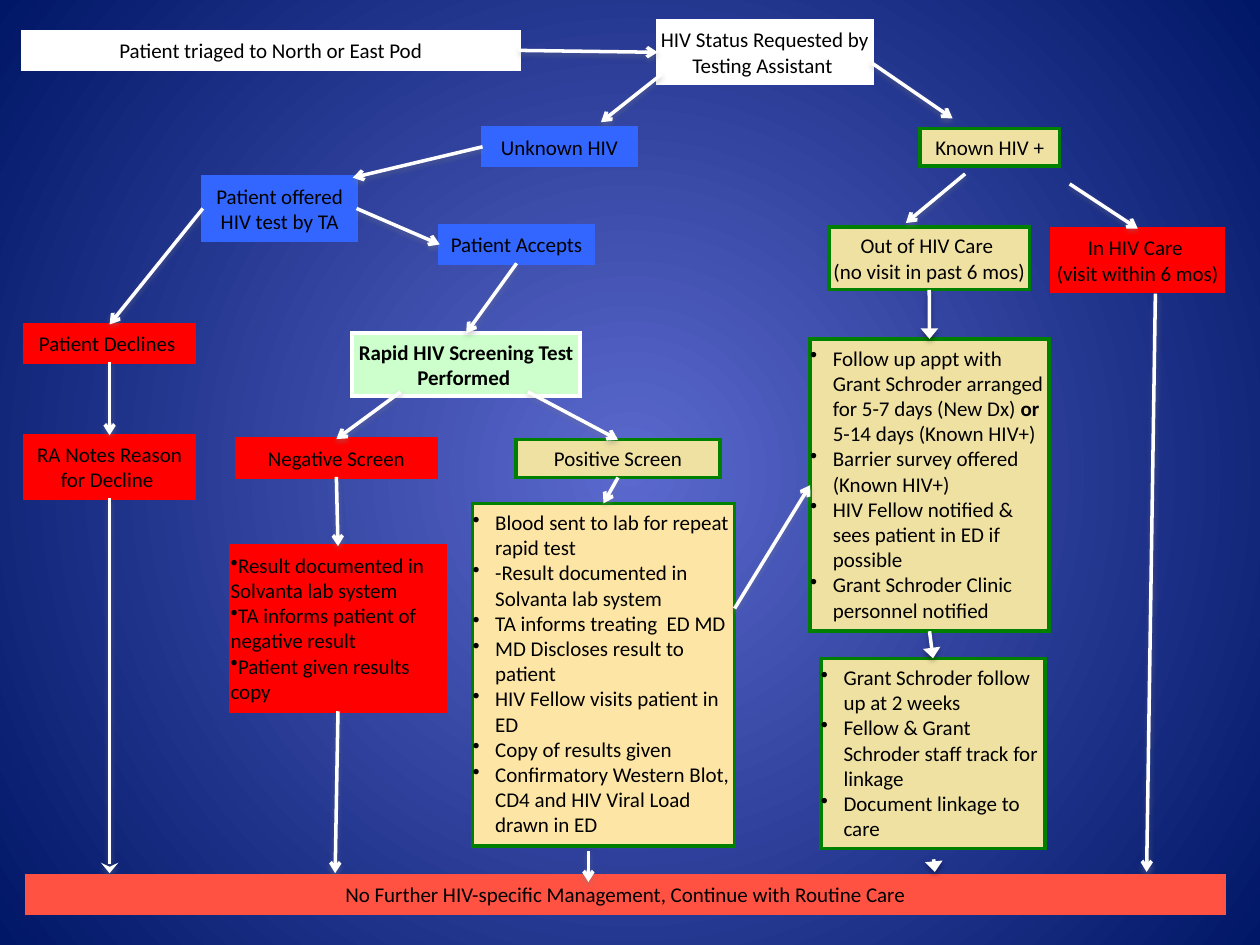
from dataclasses import dataclass
from typing import Union

from pptx import Presentation
from pptx.dml.color import RGBColor as RGB
from pptx.enum.shapes import MSO_CONNECTOR as Link, MSO_SHAPE as Kind
from pptx.enum.text import MSO_ANCHOR as Anchor, MSO_AUTO_SIZE as Auto, PP_ALIGN as Align
from pptx.oxml import parse_xml
from pptx.oxml.ns import nsdecls
from pptx.util import Inches, Pt

COLORS = {
    "white": "FFFFFF", "black": "000000", "gray": "808080", "blue": "3366FF",
    "red": "FF0000", "coral": "FF5243", "mint": "CCFFCC", "sand": "EFE1A2",
    "cream": "FDE6A5", "green": "008000", "glow": "5B69CE", "navy": "001666",
}
COLS, ROWS = 100, 75
WIDTH, HEIGHT = Inches(10), Inches(7.5)
TOP, LEFT, BOTTOM, RIGHT = range(4)
FLAT, HANG = 0, 0.18


@dataclass
class Box:
    name: str
    col: float
    row: float
    wide: float
    high: float
    fill: str
    edge: str
    lines: list[str]
    hang: Union[float, None] = None


@dataclass
class Arrow:
    start: tuple
    end: tuple
    tip: str = "arrow"
    shade: str = "gray"
    size: str = "med"


BOXES = [
    Box("triage", 1.8, 2.5, 39.4, 3, "white", "white", ["Patient triaged to North or East Pod"]),
    Box("status", 52.2, 1.65, 17, 5, "white", "white",
        ["HIV Status Requested by Testing Assistant "]),
    Box("unknown", 38.3, 10.15, 12.2, 3, "blue", "blue", ["Unknown HIV"]),
    Box("known", 73, 10.2, 11.1, 3, "sand", "green", ["Known HIV +"]),
    Box("offer", 16.1, 14.05, 12.2, 5, "blue", "blue", ["Patient offered HIV test by TA"]),
    Box("accept", 34.9, 17.9, 12.2, 3, "blue", "blue", ["Patient Accepts"]),
    Box("out", 65.8, 18, 15.9, 5, "sand", "green",
        ["Out of HIV Care ", "(no visit in past 6 mos)"]),
    Box("in", 83.5, 18.15, 13.6, 5, "red", "red", ["In HIV Care ", "(visit within 6 mos)"]),
    Box("decline", 2, 25.75, 13.4, 3, "red", "red", ["Patient Declines "]),
    Box("reason", 2, 34.55, 13.4, 5, "red", "red", ["RA Notes Reason for Decline "]),
    Box("rapid", 27.95, 26.45, 18.1, 5, "mint", "white",
        ["|Rapid HIV Screening Test Performed |"]),
    Box("negative", 18.75, 34.85, 15.9, 3, "red", "red", ["Negative Screen"]),
    Box("positive", 40.95, 34.9, 16.2, 3, "sand", "green", ["Positive Screen"]),
    Box("result", 18.3, 43.35, 17.05, 13.1, "red", "red", [
        "Result documented in Solvanta lab system",
        "TA informs patient of negative result",
        "Patient given results copy"], FLAT),
    Box("repeat", 37.5, 39.95, 20.8, 27.2, "cream", "green", [
        "Blood sent to lab for repeat rapid test",
        "-Result documented in Solvanta lab system",
        "TA informs treating  ED MD",
        "MD Discloses result to patient",
        "HIV Fellow visits patient in ED",
        "Copy of results given",
        "Confirmatory Western Blot, CD4 and HIV Viral Load drawn in ED"], HANG),
    Box("follow", 64.3, 26.9, 18.95, 23.2, "sand", "green", [
        "Follow up appt with Grant Schroder arranged for 5-7 days (New Dx) |or| "
        "5-14 days (Known HIV+)",
        "Barrier survey offered (Known HIV+)",
        "HIV Fellow notified & sees patient in ED if possible",
        "Grant Schroder Clinic personnel notified"], HANG),
    Box("track", 65.15, 52.25, 17.8, 15.1, "sand", "green", [
        "Grant Schroder follow up at 2 weeks",
        "Fellow & Grant Schroder staff track for linkage",
        "Document linkage to care"], HANG),
    Box("routine", 2.15, 69.5, 95, 3, "coral", "coral",
        ["No Further HIV-specific Management, Continue with Routine Care"]),
]

ARROWS = [
    Arrow(("triage", RIGHT), ("status", LEFT)),
    Arrow((52.5, 5.9), (47.7, 9.7)),
    Arrow((69.2, 5), (75.6, 9.4)),
    Arrow(("unknown", LEFT), (28, 14.1)),
    Arrow(("offer", LEFT), ("decline", TOP)),
    Arrow(("offer", RIGHT), ("accept", LEFT)),
    Arrow(("accept", BOTTOM), ("rapid", TOP)),
    Arrow(("decline", BOTTOM), ("reason", TOP)),
    Arrow(("reason", BOTTOM), (8.7, 69.3), "stealth", size="lg"),
    Arrow((31.8, 31.1), ("negative", TOP)),
    Arrow((41.9, 31.1), ("positive", TOP)),
    Arrow(("negative", BOTTOM), ("result", TOP)),
    Arrow(("result", BOTTOM), (26.6, 69.3)),
    Arrow(("positive", BOTTOM), ("repeat", TOP)),
    Arrow((46.7, 67.5), (46.7, 70)),
    Arrow((58.3, 48.3), ("follow", LEFT)),
    Arrow((76.6, 13.8), (71.9, 17.7)),
    Arrow((84.9, 14.6), ("in", TOP)),
    Arrow((91.7, 23.3), (91, 69.2)),
    Arrow(("out", BOTTOM), ("follow", TOP), "triangle", "black", "lg"),
    Arrow(("follow", BOTTOM), ("track", TOP), "triangle", "black", "lg"),
    Arrow((74.1, 68.2), (74.2, 69.2), "triangle", "black", "lg"),
]


def hue(name: str) -> RGB:
    return RGB.from_string(COLORS[name])


def across(cols: float) -> int:
    return round(WIDTH * cols / COLS)


def down(rows: float) -> int:
    return round(HEIGHT * rows / ROWS)


def paint(slide) -> None:
    stops = "".join(
        f'<a:gs pos="{pos}"><a:srgbClr val="{COLORS[name]}"/></a:gs>'
        for pos, name in ((0, "glow"), (100000, "navy")))
    slide._element.cSld.insert(0, parse_xml(
        f'<p:bg {nsdecls("p", "a")}><p:bgPr><a:gradFill rotWithShape="1">'
        f'<a:gsLst>{stops}</a:gsLst><a:path path="circle">'
        '<a:fillToRect l="50000" t="50000" r="50000" b="50000"/></a:path>'
        '</a:gradFill><a:effectLst/></p:bgPr></p:bg>'))


def ink(font) -> None:
    font.size = Pt(12)
    font.name = "Calibri"
    font.color.rgb = hue("black")


def write(para, text: str, hang: Union[float, None]) -> None:
    ink(para.font)
    para.alignment = Align.CENTER if hang is None else Align.LEFT
    for spot, part in enumerate(text.split("|")):
        if part:
            run = para.add_run()
            run.text = part
            ink(run.font)
            if spot % 2:
                run.font.bold = True
    if hang is not None:
        props = para._p.get_or_add_pPr()
        props.set("marL", str(Inches(hang)))
        props.set("indent", str(-Inches(hang)))
        props.insert(0, parse_xml(f'<a:buChar {nsdecls("a")} char="•"/>'))


def trace(item, name: str) -> None:
    item.line.color.rgb = hue(name)
    item.line.width = Pt(2)
    item._element.spPr.get_or_add_ln().append(
        parse_xml(f'<a:miter {nsdecls("a")} lim="800000"/>'))


def draw(slide, box: Box):
    shape = slide.shapes.add_shape(
        Kind.RECTANGLE, across(box.col), down(box.row), across(box.wide), down(box.high))
    shape.shadow.inherit = False
    shape.fill.solid()
    shape.fill.fore_color.rgb = hue(box.fill)
    trace(shape, box.edge)
    frame = shape.text_frame
    frame.word_wrap = True
    frame.auto_size = Auto.SHAPE_TO_FIT_TEXT
    frame.vertical_anchor = Anchor.TOP
    frame.margin_left = frame.margin_right = 0
    frame.margin_top = frame.margin_bottom = Inches(0.05)
    for spot, text in enumerate(box.lines):
        para = frame.add_paragraph() if spot else frame.paragraphs[0]
        write(para, text, box.hang)
    return shape


def join(slide, arrow: Arrow, shapes: dict) -> None:
    ends = [(0, 0) if end[0] in shapes else (across(end[0]), down(end[1]))
            for end in (arrow.start, arrow.end)]
    line = slide.shapes.add_connector(Link.STRAIGHT, *ends[0], *ends[1])
    for end, tie in ((arrow.start, line.begin_connect), (arrow.end, line.end_connect)):
        if end[0] in shapes:
            tie(shapes[end[0]], end[1])
    trace(line, "white")
    props = line._element.spPr
    props.get_or_add_ln().append(
        parse_xml(f'<a:tailEnd {nsdecls("a")} type="{arrow.tip}" w="{arrow.size}"/>'))
    props.append(parse_xml(
        f'<a:effectLst {nsdecls("a")}><a:outerShdw blurRad="{Pt(3.1)}" dist="{Pt(1.6)}" '
        f'dir="5400000" rotWithShape="0"><a:srgbClr val="{COLORS[arrow.shade]}">'
        '<a:alpha val="38000"/></a:srgbClr></a:outerShdw></a:effectLst>'))


def main() -> None:
    deck = Presentation()
    deck.slide_width, deck.slide_height = WIDTH, HEIGHT
    slide = deck.slides.add_slide(deck.slide_layouts[6])
    paint(slide)
    shapes = {box.name: draw(slide, box) for box in BOXES}
    for arrow in ARROWS:
        join(slide, arrow, shapes)
    deck.save("out.pptx")


if __name__ == "__main__":
    main()
